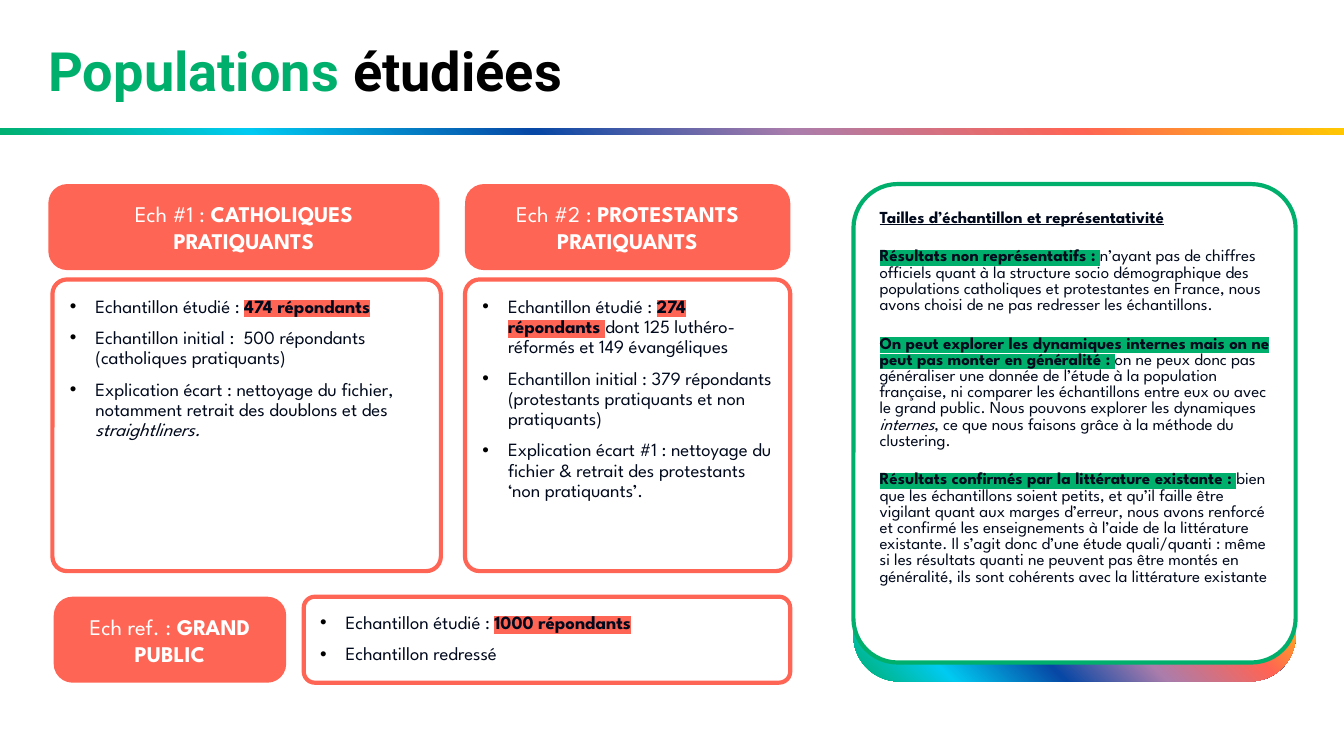
"""Build the slide that presents the populations studied and their samples."""
import pptx
import pptx.dml.color
import pptx.enum.dml
import pptx.enum.shapes
import pptx.enum.text
import pptx.oxml
import pptx.oxml.ns
import pptx.util
from lxml import etree

Inches, Pt = pptx.util.Inches, pptx.util.Pt
RGB = pptx.dml.color.RGBColor.from_string
Align, Anchor = pptx.enum.text.PP_ALIGN, pptx.enum.text.MSO_ANCHOR
qn = pptx.oxml.ns.qn

theme = {
    "green": "00AF6C", "coral": "FF6554", "white": "FFFFFF",
    "black": "000000", "ink": "01091D", "green_mark": "01AF6D",
    "rainbow": [(0, "00AF6C"), (19, "00CAF1"), (40, "0747A5"),
                (59, "AB7DAB"), (80, "FF6454"), (100, "FFCB00")],
    "title_font": "Roboto", "body_font": "League Spartan", "bullet_font": "Arial",
    "title_size": 29, "header_size": 12, "list_size": 10, "note_size": 9,
    "outline": 2.25,
}
insets = dict.fromkeys(
    ("margin_left", "margin_top", "margin_right", "margin_bottom"), Inches(0.1))
styles = {
    "plain": {}, "bold": {"bold": True}, "italic": {"italic": True},
    "heading": {"bold": True, "underline": True}, "marked": {"bold": True},
}


def add_panel(place, corner, fill=None, outline=None):
    """Add a rounded panel, or a rainbow one when no fill is given."""
    kinds = pptx.enum.shapes.MSO_SHAPE
    kind = kinds.ROUNDED_RECTANGLE if corner else kinds.RECTANGLE
    panel = slide.shapes.add_shape(kind, *map(Inches, place))
    panel.shadow.inherit = False
    if corner:
        panel.adjustments[0] = corner
    if fill:
        panel.fill.solid()
        panel.fill.fore_color.rgb = RGB(theme[fill])
    else:
        panel.fill.gradient()
        panel.fill.gradient_angle = 45
        stops = panel._element.spPr.find(".//" + qn("a:gsLst"))
        for stop in list(stops):
            stops.remove(stop)
        for percent, color in theme["rainbow"]:
            stop = etree.SubElement(stops, qn("a:gs"), pos=str(percent * 1000))
            etree.SubElement(stop, qn("a:srgbClr"), val=color)
    if outline:
        panel.line.color.rgb = RGB(theme[outline])
        panel.line.width = Pt(theme["outline"])
    else:
        panel.line.fill.background()
    return panel


def write(holder, paragraphs, layout, size, color="ink", font="body_font",
          anchor=Anchor.TOP, mark=None, bullet=None):
    """Fill a shape with paragraphs made of (text, style, optional colour) runs."""
    frame = holder.text_frame
    for name, value in {**insets, "word_wrap": True, "vertical_anchor": anchor}.items():
        setattr(frame, name, value)
    for index, runs in enumerate(paragraphs):
        paragraph = frame.add_paragraph() if index else frame.paragraphs[0]
        for name, value in layout.items():
            setattr(paragraph, name, value)
        if bullet:
            props = paragraph._p.get_or_add_pPr()
            props.set("marL", str(Inches(0.19)))
            props.set("indent", str(-Inches(0.19)))
            tint = etree.SubElement(props, qn("a:buClr"))
            etree.SubElement(tint, qn("a:srgbClr"), val=theme["black"])
            etree.SubElement(props, qn("a:buFont"), typeface=theme["bullet_font"])
            etree.SubElement(props, qn("a:buChar"), char=bullet)
        for words, style, *tone in runs:
            run = paragraph.add_run()
            run.text = words
            look = {"name": theme[font], "size": Pt(theme[size]), **styles[style]}
            for name, value in look.items():
                setattr(run.font, name, value)
            run.font.color.rgb = RGB(theme[tone[0] if tone else color])
            if style == "marked":
                highlight = etree.Element(qn("a:highlight"))
                etree.SubElement(highlight, qn("a:srgbClr"), val=theme[mark])
                run._r.rPr.find(qn("a:solidFill")).addnext(highlight)


deck = pptx.Presentation()
deck.slide_width, deck.slide_height = Inches(10), Inches(10 * 9 / 16)
slide = deck.slides.add_slide(deck.slide_layouts[5])

title = slide.shapes.title
title_box = {"left": 0.26, "top": 0.18, "width": 7.22, "height": 1.03}
for name, value in title_box.items():
    setattr(title, name, Inches(value))
write(title, [[("Populations ", "bold", "green"), ("étudiées", "bold")]],
      {"alignment": Align.LEFT, "space_before": Pt(12), "space_after": Pt(12)},
      "title_size", "black", "title_font")
title.text_frame.auto_size = pptx.enum.text.MSO_AUTO_SIZE.SHAPE_TO_FIT_TEXT

add_panel((-0.06, 0.96, 10.11, 0.04), None)
add_panel((6.35, 4.39, 3.29, 0.68), 0.5)

notes = [
    [("Tailles d’échantillon et représentativité", "heading")],
    [("Résultats non représentatifs : ", "marked"),
     ("n’ayant pas de chiffres officiels quant à la structure socio démographique "
      "des populations catholiques et protestantes en France, nous avons choisi de "
      "ne pas redresser les échantillons.", "plain")],
    [("On peut explorer les dynamiques internes mais on ne peut pas monter en "
      "généralité : ", "marked"),
     ("on ne peux donc pas généraliser une donnée de l’étude à la population "
      "française, ni comparer les échantillons entre eux ou avec le grand public. "
      "Nous pouvons explorer les dynamiques ", "plain"),
     ("internes", "italic"),
     (", ce que nous faisons grâce à la méthode du clustering.", "plain")],
    [("Résultats confirmés par la littérature existante : ", "marked"),
     ("bien que les échantillons soient petits, et qu’il faille être vigilant quant "
      "aux marges d’erreur, nous avons renforcé et confirmé les enseignements à "
      "l’aide de la littérature existante. Il s’agit donc d’une étude quali/quanti : "
      "même si les résultats quanti ne peuvent pas être montés en généralité, ils "
      "sont cohérents avec la littérature existante", "plain")],
]
write(add_panel((6.35, 1.37, 3.29, 3.56), 0.1, "white", "green"), notes,
      {"alignment": Align.LEFT, "line_spacing": 0.8,
       "space_before": Pt(6), "space_after": Pt(6)},
      "note_size", mark="green_mark")

samples = [
    ("Ech #1 : ", "CATHOLIQUES PRATIQUANTS",
     (0.36, 1.37, 2.91, 0.64), (0.39, 2.08, 2.89, 2.17), 0.05,
     [[("Echantillon étudié : ", "plain"), ("474 répondants", "marked")],
      [("Echantillon initial :  500 répondants (catholiques pratiquants)", "plain")],
      [("Explication écart : nettoyage du fichier, notamment retrait des doublons "
        "et des ", "plain"), ("straightliners.", "italic")]]),
    ("Ech #2 : ", "PROTESTANTS PRATIQUANTS",
     (3.46, 1.37, 2.42, 0.64), (3.46, 2.08, 2.42, 2.17), 0.05,
     [[("Echantillon étudié : ", "plain"), ("274 répondants ", "marked"),
       ("dont 125 luthéro-réformés et 149 évangéliques", "plain")],
      [("Echantillon initial : 379 répondants (protestants pratiquants et non "
        "pratiquants)", "plain")],
      [("Explication écart #1 : nettoyage du fichier & retrait des protestants "
        "‘non pratiquants’.", "plain")]]),
    ("Ech ref. : ", "GRAND PUBLIC",
     (0.4, 4.44, 1.73, 0.64), (2.26, 4.44, 3.62, 0.64), 0.13,
     [[("Echantillon étudié : ", "plain"), ("1000 répondants", "marked")],
      [("Echantillon redressé", "plain")]]),
]
for label, population, header_place, detail_place, corner, details in samples:
    write(add_panel(detail_place, corner, "white", "coral"), details,
          {"alignment": Align.LEFT, "line_spacing": 0.9, "space_after": Pt(6)},
          "list_size", mark="coral", bullet="•")
    write(add_panel(header_place, 0.22, "coral"),
          [[(label, "plain"), (population, "bold")]],
          {"alignment": Align.CENTER}, "header_size", "white", anchor=Anchor.MIDDLE)

deck.save("out.pptx")
